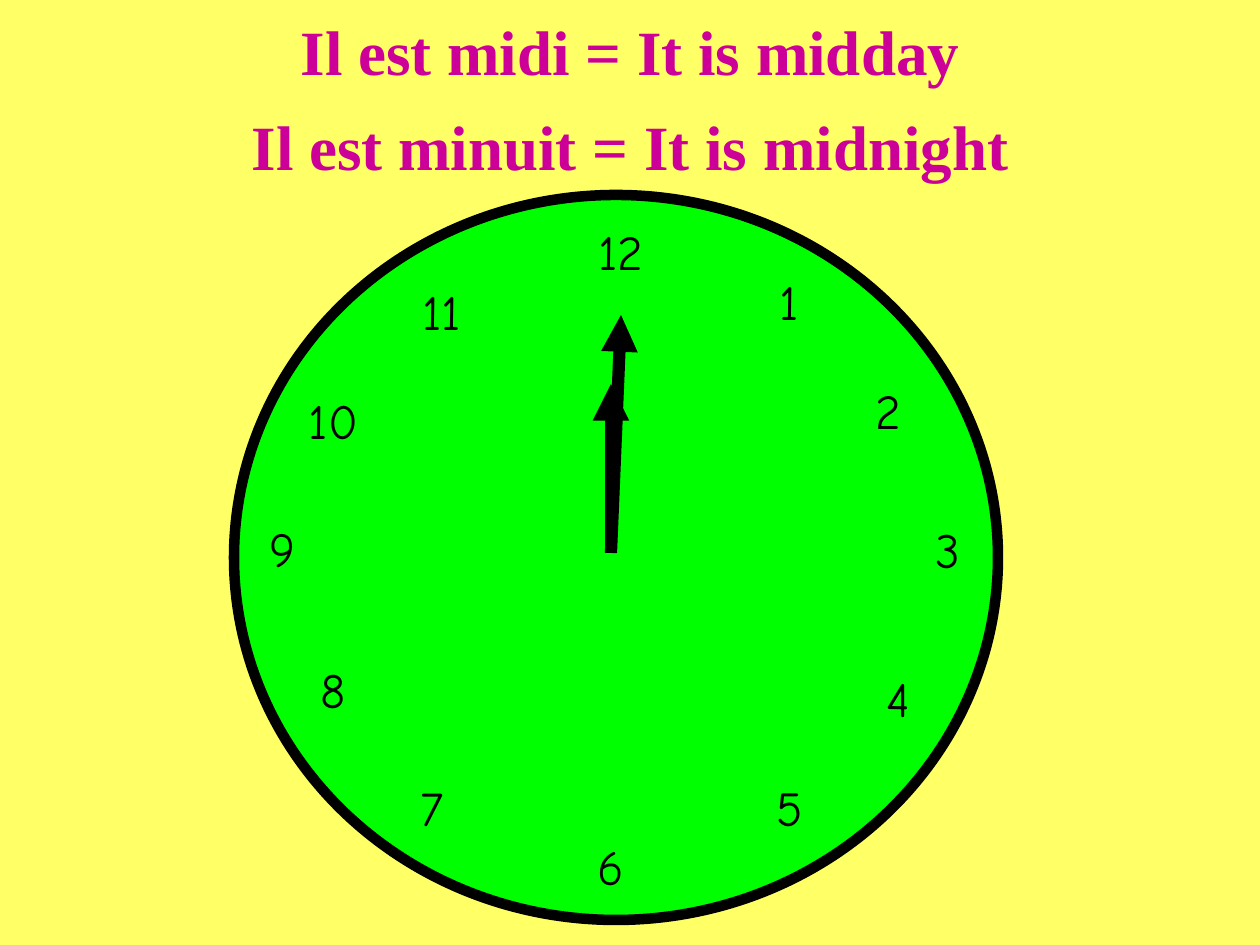
import pptx
import pptx.util
import pptx.dml.color
import pptx.enum.shapes
import pptx.enum.text
import pptx.oxml.ns
from lxml import etree

RGB = pptx.dml.color.RGBColor
BACK = RGB(0xFF, 0xFF, 0x66)
FACE = RGB(0x00, 0xFF, 0x00)
INK = RGB(0x00, 0x00, 0x00)
PINK = RGB(0xCC, 0x00, 0x99)

WIDE, HIGH = 1260, 945
BOX_W, BOX_H = 79, 72

HEAD = dict(name="Times New Roman", size=pptx.util.Pt(36), bold=True)
HOUR = dict(name="Comic Neue", size=pptx.util.Pt(28), bold=False)

# Left and top of each hour's box, from 1 to 12
HOURS = [(750, 265), (849, 374), (908, 513), (859, 662),
         (750, 771), (571, 830), (393, 771), (294, 653),
         (243, 512), (294, 384), (402, 275), (581, 215)]

# Tips of the long and the short hand, and the point they share
TIPS = [(621, 315), (611, 384)]
HUB = (611, 553)


def px(num):
    return pptx.util.Emu(round(num * 914400 / 126))


def place(shape, left, top, width, height):
    spot = dict(left=left, top=top, width=width, height=height)
    for key, val in spot.items():
        setattr(shape, key, px(val))


def write(shape, text, style, color):
    frame = shape.text_frame
    form = dict(word_wrap=True,
                auto_size=pptx.enum.text.MSO_AUTO_SIZE.NONE,
                vertical_anchor=pptx.enum.text.MSO_ANCHOR.TOP)
    for key, val in form.items():
        setattr(frame, key, val)
    para = frame.paragraphs[0]
    para.alignment = pptx.enum.text.PP_ALIGN.CENTER
    para.line_spacing = 1.0
    run = para.add_run()
    run.text = text
    for key, val in style.items():
        setattr(run.font, key, val)
    run.font.color.rgb = color


def add_text(shapes, text, spot, style, color):
    box = shapes.add_textbox(*map(px, spot))
    write(box, text, style, color)


def add_face(shapes):
    face = shapes.add_shape(pptx.enum.shapes.MSO_SHAPE.OVAL,
                            *map(px, (234, 195, 764, 725)))
    face.shadow.inherit = False
    face.fill.solid()
    face.fill.fore_color.rgb = FACE
    face.line.color.rgb = INK
    face.line.width = pptx.util.Pt(6)


def add_hand(shapes, tip):
    hand = shapes.add_connector(pptx.enum.shapes.MSO_CONNECTOR.STRAIGHT,
                                *map(px, tip + HUB))
    hand.line.color.rgb = INK
    hand.line.width = pptx.util.Pt(7)
    # Arrowhead at the tip, and no shadow
    qn = pptx.oxml.ns.qn
    etree.SubElement(hand.line._get_or_add_ln(), qn("a:headEnd"),
                     type="triangle")
    etree.SubElement(hand._element.spPr, qn("a:effectLst"))


def main():
    deck = pptx.Presentation()
    deck.slide_width, deck.slide_height = px(WIDE), px(HIGH)
    slide = deck.slides.add_slide(deck.slide_layouts[5])
    slide.background.fill.solid()
    slide.background.fill.fore_color.rgb = BACK

    # Headings, centred across the slide
    title = slide.shapes.title
    place(title, (WIDE - 694) // 2, 6, 694, 88)
    write(title, "Il est midi = It is midday", HEAD, PINK)
    add_text(slide.shapes, "Il est minuit = It is midnight",
             ((WIDE - 824) // 2, 101, 824, 88), HEAD, PINK)

    # Clock: face, hands, hours
    clock = slide.shapes.add_group_shape().shapes
    add_face(clock)
    for tip in TIPS:
        add_hand(clock, tip)
    for num, spot in enumerate(HOURS, 1):
        add_text(clock, str(num), spot + (BOX_W, BOX_H), HOUR, INK)

    deck.save("out.pptx")


if __name__ == "__main__":
    main()
